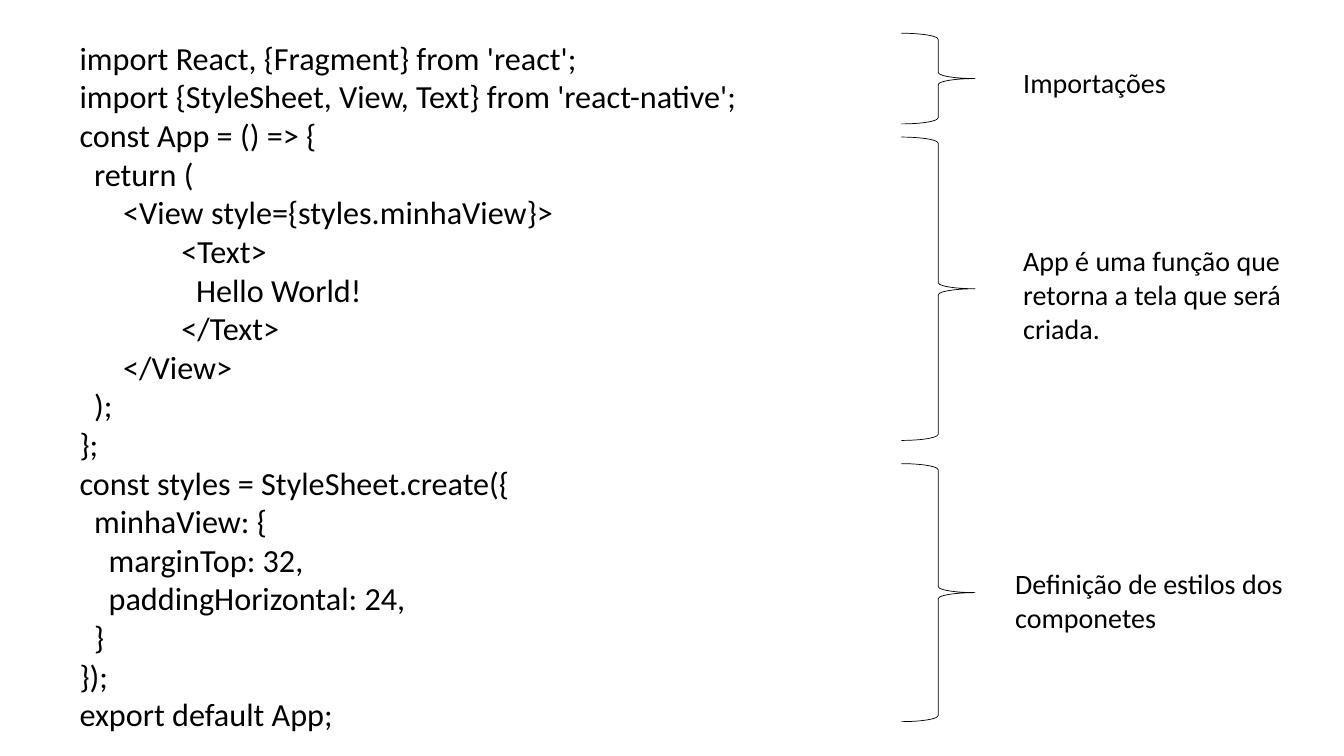
from dataclasses import dataclass

from pptx import Presentation
from pptx.dml.color import RGBColor
from pptx.enum.shapes import MSO_SHAPE
from pptx.enum.text import MSO_AUTO_SIZE as AutoSize
from pptx.util import Inches, Pt

CODE = [
    (0, "import React, {Fragment} from 'react';"),
    (0, "import {StyleSheet, View, Text} from 'react-native';"),
    (0, "const App = () => {"),
    (1, "return ("),
    (3, "<View style={styles.minhaView}>"),
    (7, "<Text>"),
    (8, "Hello World!"),
    (7, "</Text>"),
    (3, "</View>"),
    (1, ");"),
    (0, "};"),
    (0, "const styles = StyleSheet.create({"),
    (1, "minhaView: {"),
    (2, "marginTop: 32,"),
    (2, "paddingHorizontal: 24,"),
    (1, "}"),
    (0, "});"),
    (0, "export default App;"),
]
SECTIONS = [
    {"note": "Importações", "brace": (0.33, 0.9), "box": (10.05, 0.6, 2.82, 0.44)},
    {"note": "App é uma função que retorna a tela que será criada.",
     "brace": (1.36, 3.01), "box": (10.05, 2.37, 2.82, 1.11)},
    {"note": "Definição de estilos dos componetes",
     "brace": (4.6, 2.56), "box": (9.97, 5.57, 3.12, 0.77)},
]
CODE_BOX = (0.69, 0.33, 9.08, 7.07)
BRACE_LEFT, BRACE_WIDTH = 8.94, 0.73


@dataclass(frozen=True)
class Theme:
    font: str = "Calibri"
    ink: RGBColor = RGBColor(0, 0, 0)
    code_size: float = 23
    note_size: float = 20
    indent_step: float = 10.4
    brace_line: float = 0.5


THEME = Theme()


def add_text(slide, box, lines, size):
    frame = slide.shapes.add_textbox(*map(Inches, box)).text_frame
    frame.word_wrap = True
    frame.auto_size = AutoSize.SHAPE_TO_FIT_TEXT
    for index, (level, words) in enumerate(lines):
        paragraph = frame.add_paragraph() if index else frame.paragraphs[0]
        if level:
            properties = paragraph._p.get_or_add_pPr()
            properties.set("marL", str(Pt(level * THEME.indent_step)))
            properties.set("indent", "0")
        run = paragraph.add_run()
        run.text = words
        run.font.name = THEME.font
        run.font.size = Pt(size)
        run.font.color.rgb = THEME.ink


def add_brace(slide, top, height):
    brace = slide.shapes.add_shape(
        MSO_SHAPE.RIGHT_BRACE,
        *map(Inches, (BRACE_LEFT, top, BRACE_WIDTH, height)))
    brace.shadow.inherit = False
    brace.fill.background()
    brace.line.color.rgb = THEME.ink
    brace.line.width = Pt(THEME.brace_line)


def main():
    deck = Presentation()
    deck.slide_width, deck.slide_height = Inches(13.33), Inches(7.5)
    slide = deck.slides.add_slide(deck.slide_layouts[6])
    add_text(slide, CODE_BOX, CODE, THEME.code_size)
    for section in SECTIONS:
        add_brace(slide, *section["brace"])
        add_text(slide, section["box"], [(0, section["note"])], THEME.note_size)
    deck.save("out.pptx")


if __name__ == "__main__":
    main()
